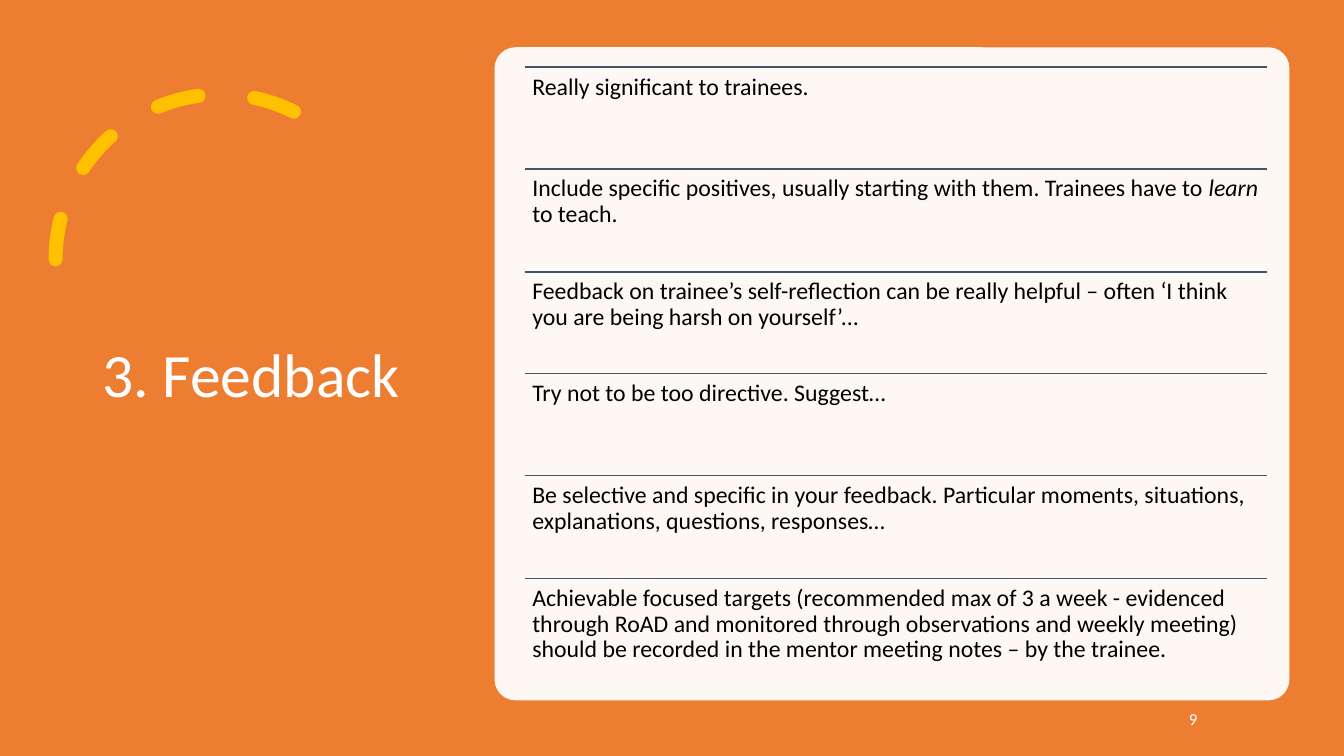
from dataclasses import dataclass

from lxml.etree import SubElement
from pptx import Presentation
from pptx.dml.color import RGBColor
from pptx.enum.dml import MSO_LINE
from pptx.enum.shapes import MSO_CONNECTOR, MSO_SHAPE as SHAPE
from pptx.enum.text import MSO_ANCHOR as ANCHOR, PP_ALIGN as ALIGN
from pptx.oxml.ns import qn
from pptx.util import Emu, Pt

PX = 9525  # EMU in one px


@dataclass(frozen=True)
class Theme:
    font: str = "Calibri"
    orange: str = "ED7D31"
    gold: str = "FFC000"
    white: str = "FFFFFF"
    black: str = "000000"
    slate: str = "44546A"
    title: int = 44
    body: int = 17
    number: int = 12


@dataclass(frozen=True)
class Box:
    x: int
    y: int
    w: int
    h: int

    def emu(self) -> list[Emu]:
        return [Emu(v * PX) for v in (self.x, self.y, self.w, self.h)]


@dataclass(frozen=True)
class Point:
    text: str
    italic: str = ""
    rest: str = ""


T = Theme()
PAGE = Box(0, 0, 1280, 720)
ROWS = Box(500, 64, 707, 584)
POINTS = [
    Point("Really significant to trainees."),
    Point("Include specific positives, usually starting with them. Trainees have to ",
          "learn", " to teach."),
    Point("Feedback on trainee’s self-reflection can be really helpful – often "
          "‘I think you are being harsh on yourself’..."),
    Point("Try not to be too directive. Suggest…"),
    Point("Be selective and specific in your feedback. Particular moments, "
          "situations, explanations, questions, responses…"),
    Point("Achievable focused targets (recommended max of 3 a week - evidenced "
          "through RoAD and monitored through observations and weekly meeting) "
          "should be recorded in the mentor meeting notes – by the trainee."),
]


def rgb(color: str) -> RGBColor:
    return RGBColor.from_string(color)


def add_shape(s, kind: SHAPE, box: Box, fill: str = "", adjust: tuple = ()):
    sp = s.shapes.add_shape(kind, *box.emu())
    sp.shadow.inherit = False
    sp.line.fill.background()
    if fill:
        sp.fill.solid()
        sp.fill.fore_color.rgb = rgb(fill)
    else:
        sp.fill.background()
    for i, value in enumerate(adjust):
        sp.adjustments[i] = value
    return sp


def add_text_box(s, box: Box):
    return s.shapes.add_textbox(*box.emu())


def write(sp, point: Point, *, size: int, color: str, align=ALIGN.LEFT,
          anchor=ANCHOR.MIDDLE, inset: int | None = None, after: int = 0) -> None:
    tf = sp.text_frame
    tf.word_wrap = True
    tf.vertical_anchor = anchor
    if inset is not None:
        tf.margin_left = tf.margin_right = Emu(inset * PX)
        tf.margin_top = tf.margin_bottom = Emu(inset * PX)
    p = tf.paragraphs[0]
    p.alignment = align
    p.line_spacing = 0.9
    p.space_after = Pt(after)
    for text, italic in ((point.text, False), (point.italic, True), (point.rest, False)):
        if text:
            r = p.add_run()
            r.text = text
            r.font.name = T.font
            r.font.size = Pt(size)
            r.font.italic = italic
            r.font.color.rgb = rgb(color)


def add_rule(s, x: int, y: int, w: int) -> None:
    cn = s.shapes.add_connector(MSO_CONNECTOR.STRAIGHT, *Box(x, y, x + w, y).emu())
    cn.line.color.rgb = rgb(T.slate)
    cn.line.width = Pt(1)
    SubElement(cn.element.spPr, qn("a:effectLst"))


def add_dashed_arc(s, box: Box) -> None:
    sp = add_shape(s, SHAPE.ARC, box, adjust=(146.129, 0))
    sp.line.color.rgb = rgb(T.gold)
    sp.line.width = Pt(10)
    sp.line.dash_style = MSO_LINE.DASH
    sp.element.spPr.find(qn("a:ln")).set("cap", "rnd")
    sp.element.spPr.find(qn("a:xfrm")).set("flipH", "1")


def add_card(s, box: Box) -> None:
    sp = add_shape(s, SHAPE.ROUNDED_RECTANGLE, box, T.white, (0.032,))
    color = sp.element.spPr.find(qn("a:solidFill"))[0]
    SubElement(color, qn("a:alpha")).set("val", "95000")


def add_points(s) -> None:
    pitch = ROWS.h / len(POINTS)
    for i, point in enumerate(POINTS):
        row = Box(ROWS.x, ROWS.y + round(i * pitch), ROWS.w, round(pitch))
        add_rule(s, row.x, row.y, row.w)
        write(add_text_box(s, row), point, size=T.body, color=T.black,
              anchor=ANCHOR.TOP, inset=7)


def main() -> None:
    prs = Presentation()
    _, _, prs.slide_width, prs.slide_height = PAGE.emu()
    s = prs.slides.add_slide(prs.slide_layouts[6])

    # Backdrop and title
    add_shape(s, SHAPE.RECTANGLE, PAGE, T.orange)
    add_dashed_arc(s, Box(53, 90, 314, 314))
    write(add_text_box(s, Box(88, 67, 310, 585)), Point("3. Feedback"),
          size=T.title, color=T.white)

    # Card and slide number
    add_card(s, Box(471, 45, 757, 622))
    write(add_shape(s, SHAPE.OVAL, Box(904, 667, 288, 38)), Point("9"),
          size=T.number, color=T.white, align=ALIGN.RIGHT, after=6)

    # Ruled list of points
    add_points(s)

    prs.save("out.pptx")


if __name__ == "__main__":
    main()
